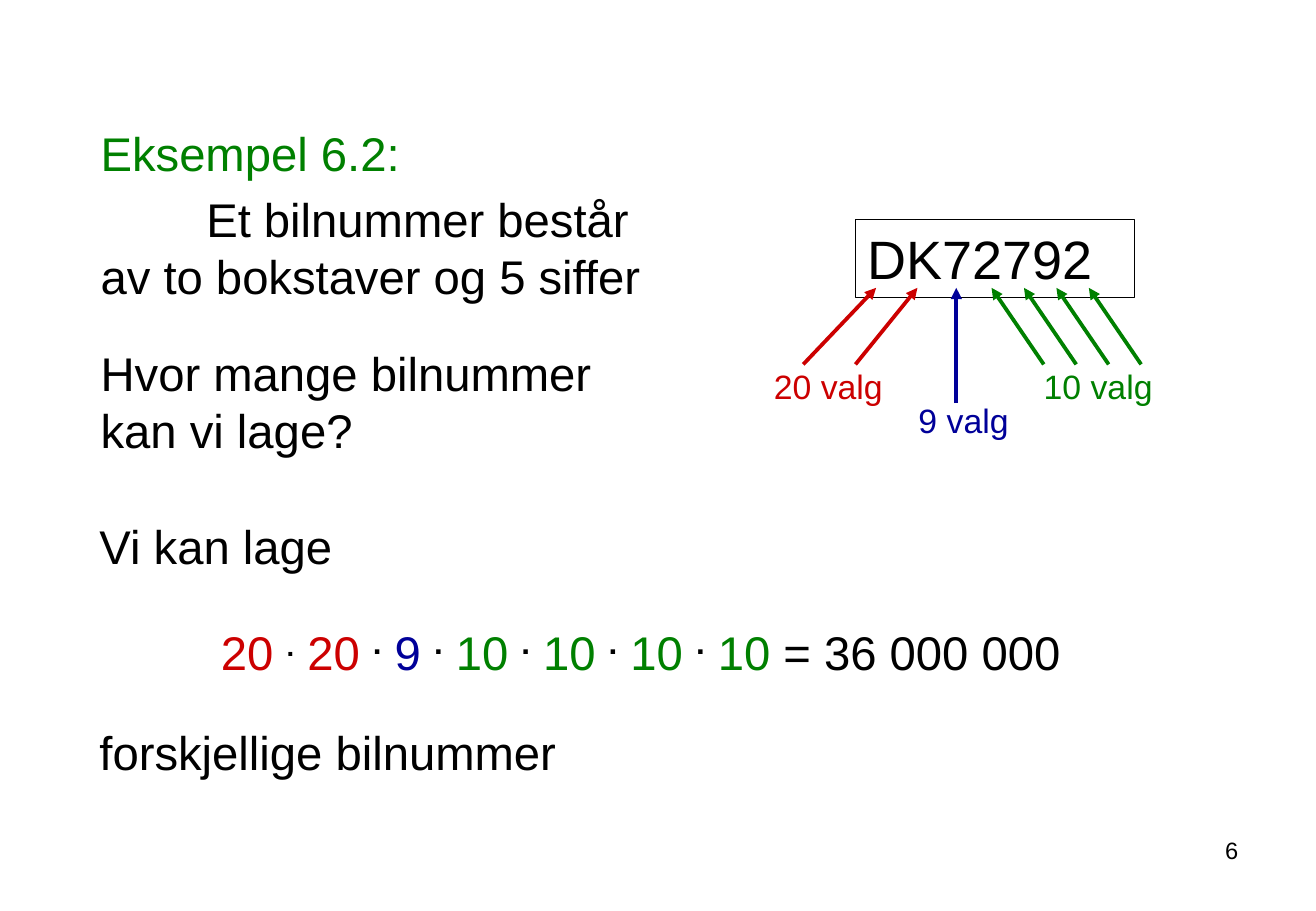
from lxml.etree import SubElement
from pptx import Presentation
from pptx.dml.color import RGBColor
from pptx.enum.shapes import MSO_CONNECTOR, MSO_SHAPE
from pptx.enum.text import MSO_ANCHOR, PP_ALIGN
from pptx.oxml.ns import qn
from pptx.util import Inches, Pt

BLACK = RGBColor(0x00, 0x00, 0x00)
RED = RGBColor(0xCC, 0x00, 0x00)
BLUE = RGBColor(0x00, 0x00, 0x99)
GREEN = RGBColor(0x00, 0x80, 0x00)


class Slide:
    font_name = "Arial"

    def __init__(self, page):
        self.page = page

    def style(self, font, size, color):
        font.name = self.font_name
        font.size = Pt(size)
        font.color.rgb = color

    def paragraph(self, frame, text="", size=28, color=BLACK, before=0, indent=0):
        """Fill the empty first paragraph, or add one after it."""
        para = frame.paragraphs[0]
        if para.runs:
            para = frame.add_paragraph()
            para.space_before = Pt(before)
        if text:
            para.add_run().text = text
        if indent:
            para._p.get_or_add_pPr().set("indent", str(Inches(indent)))
        self.style(para.font, size, color)
        return para

    def span(self, para, text, color, size=28):
        span = para.add_run()
        span.text = text
        self.style(span.font, size, color)
        return span

    def raised_dot(self, para, size):
        dot = self.span(para, ".", BLACK, size)
        dot.font.bold = True
        dot._r.get_or_add_rPr().set("baseline", "30000")

    def text_box(self, left, top, width, height):
        box = self.page.shapes.add_textbox(
            Inches(left), Inches(top), Inches(width), Inches(height))
        box.text_frame.word_wrap = True
        return box.text_frame

    def label(self, text, left, top, width, color):
        self.paragraph(self.text_box(left, top, width, 0.43), text, 20, color)

    def plate(self, text, left, top, width, height):
        plate = self.page.shapes.add_shape(
            MSO_SHAPE.RECTANGLE, Inches(left), Inches(top), Inches(width), Inches(height))
        plate.shadow.inherit = False
        plate.fill.background()
        plate.line.color.rgb = BLACK
        plate.line.width = Pt(0.75)
        plate.text_frame.vertical_anchor = MSO_ANCHOR.TOP
        self.paragraph(plate.text_frame, text, 32).alignment = PP_ALIGN.LEFT

    def arrow(self, start, end, color):
        arrow = self.page.shapes.add_connector(
            MSO_CONNECTOR.STRAIGHT, *(Inches(value) for value in start + end))
        arrow.line.color.rgb = color
        arrow.line.width = Pt(2.25)
        SubElement(arrow.line._get_or_add_ln(), qn("a:tailEnd"), type="triangle")
        SubElement(arrow._element.spPr, qn("a:effectLst"))


def main():
    deck = Presentation()
    deck.slide_width = Inches(10.83)
    deck.slide_height = Inches(7.5)
    slide = Slide(deck.slides.add_slide(deck.slide_layouts[6]))

    task = slide.text_box(0.73, 0.97, 4.93, 2.79)
    slide.paragraph(task, "Eksempel 6.2:", color=GREEN)
    slide.paragraph(task, "Et bilnummer består av to bokstaver og 5 siffer",
                    before=6, indent=0.87)
    slide.paragraph(task, "Hvor mange bilnummer kan vi lage?", before=24)

    slide.plate("DK72792", 7.04, 1.81, 2.3, 0.64)
    tip, foot = 2.37, 3
    slide.arrow((6.61, foot), (7.21, tip), RED)
    slide.arrow((7.04, foot), (7.55, tip), RED)
    slide.arrow((7.87, 3.32), (7.87, tip), BLUE)
    for digit in range(4):
        shift = digit * 0.267
        slide.arrow((8.59 + shift, foot), (8.16 + shift, tip), GREEN)
    slide.label("20 valg", 6.27, 2.96, 1.28, RED)
    slide.label("9 valg", 7.46, 3.24, 1.11, BLUE)
    slide.label("10 valg", 8.49, 2.96, 1.28, GREEN)

    answer = slide.text_box(0.72, 4.21, 9.21, 2.21)
    slide.paragraph(answer, "Vi kan lage")
    product = slide.paragraph(answer, before=25, indent=1)
    factors = [("20", RED)] * 2 + [("9", BLUE)] + [("10", GREEN)] * 4
    for index, (factor, color) in enumerate(factors):
        if index:
            slide.span(product, " ", BLACK)
            slide.raised_dot(product, 28 if index == 1 else 32)
            slide.span(product, " ", BLACK)
        slide.span(product, factor, color)
    slide.span(product, " = 36 000 000", BLACK)
    slide.paragraph(answer, "forskjellige bilnummer", before=25)

    number = slide.text_box(7.76, 6.83, 2.53, 0.52)
    slide.paragraph(number, "6", 14).alignment = PP_ALIGN.RIGHT

    deck.save("out.pptx")


if __name__ == "__main__":
    main()
